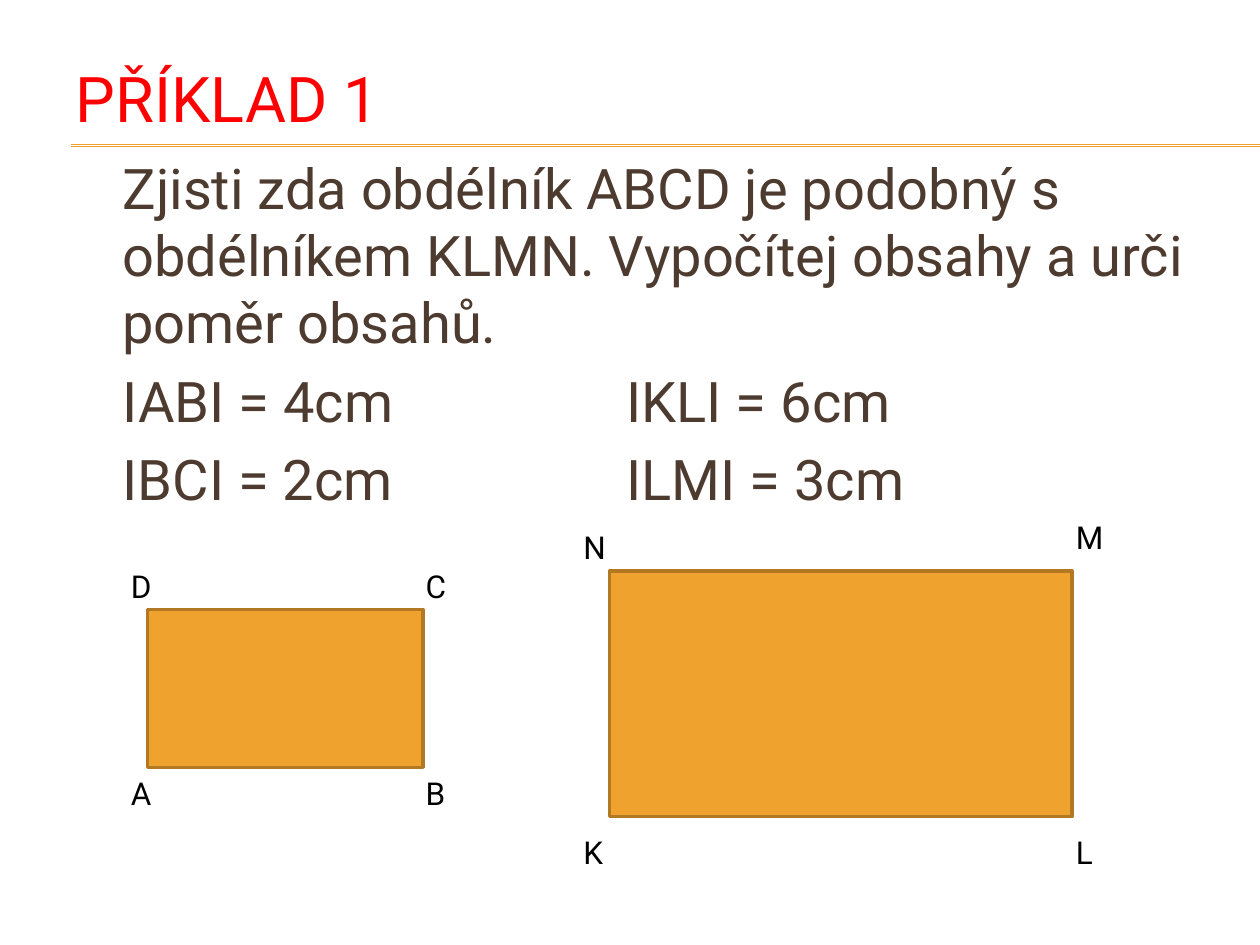
import pptx
import pptx.util
import pptx.dml.color
import pptx.enum.shapes
import pptx.enum.text
import pptx.oxml

Cm = pptx.util.Cm
Pt = pptx.util.Pt

FONT = "Roboto"
COLORS = {
    "title": "FF0000",
    "body": "4E3B30",
    "label": "000000",
    "fill": "F0A22E",
    "outline": "B27822",
}
TITLE = "PŘÍKLAD 1"
BODY = [
    "\tZjisti zda obdélník ABCD je podobný s obdélníkem KLMN. Vypočítej obsahy a urči poměr obsahů.",
    "\tIABI = 4cm\t\tIKLI = 6cm",
    "\tIBCI = 2cm\t\tILMI = 3cm",
]
RULE_HEIGHTS = [2.92, 2.95]
RECTANGLES = [
    {
        "box": (2.97, 12.29, 5.56, 3.18),
        "labels": {"A": (2.39, 15.47), "B": (8.33, 15.47), "C": (8.33, 11.3), "D": (2.39, 11.3)},
    },
    {
        "box": (12.29, 11.51, 9.32, 4.95),
        "labels": {"K": (11.51, 16.66), "L": (21.44, 16.66), "M": (21.44, 10.31), "N": (11.51, 10.52)},
    },
]
LABEL_SIZE = (0.99, 1.02)


def color(name):
    return pptx.dml.color.RGBColor.from_string(COLORS[name])


def place(shape, *box):
    shape.left, shape.top, shape.width, shape.height = [Cm(value) for value in box]


def format_runs(paragraph, size, color_name):
    for run in paragraph.runs:
        run.font.name = FONT
        run.font.size = Pt(size)
        run.font.color.rgb = color(color_name)


def add_text_box(slide, *box):
    text_box = slide.shapes.add_textbox(*[Cm(value) for value in box])
    text_box.text_frame.word_wrap = True
    return text_box


def add_rule(slide, height):
    rule = slide.shapes.add_connector(
        pptx.enum.shapes.MSO_CONNECTOR.STRAIGHT, Cm(1.43), Cm(height), Cm(25.4), Cm(height)
    )
    rule.line.color.rgb = color("fill")
    rule.line.width = Pt(0.75)
    rule._element.spPr.append(pptx.oxml.parse_xml(
        '<a:effectLst xmlns:a="http://schemas.openxmlformats.org/drawingml/2006/main"/>'
    ))


def add_title(slide):
    title = slide.shapes.title
    place(title, 1.27, 0.76, 22.86, 2.41)
    title.text_frame.text = TITLE
    title.text_frame.vertical_anchor = pptx.enum.text.MSO_ANCHOR.MIDDLE
    paragraph = title.text_frame.paragraphs[0]
    paragraph.alignment = pptx.enum.text.PP_ALIGN.LEFT
    format_runs(paragraph, 36, "title")


def add_body(slide):
    text_frame = add_text_box(slide, 1.27, 2.97, 22.86, 15.09).text_frame
    text_frame.text = "\n".join(BODY)
    for paragraph in text_frame.paragraphs:
        properties = paragraph._p.get_or_add_pPr()
        properties.set("marL", str(Cm(0.95)))
        properties.set("indent", str(Cm(-0.95)))
        properties.set("defTabSz", str(Cm(2.54)))
        paragraph.space_before = Pt(6.4)
        format_runs(paragraph, 32, "body")


def add_rectangle(slide, box, labels):
    rectangle = slide.shapes.add_shape(
        pptx.enum.shapes.MSO_SHAPE.RECTANGLE, *[Cm(value) for value in box]
    )
    rectangle.shadow.inherit = False
    rectangle.fill.solid()
    rectangle.fill.fore_color.rgb = color("fill")
    rectangle.line.color.rgb = color("outline")
    rectangle.line.width = Pt(2)
    for letter, position in labels.items():
        text_frame = add_text_box(slide, *position, *LABEL_SIZE).text_frame
        text_frame.text = letter
        text_frame.auto_size = pptx.enum.text.MSO_AUTO_SIZE.SHAPE_TO_FIT_TEXT
        format_runs(text_frame.paragraphs[0], 18, "label")


def main():
    presentation = pptx.Presentation()
    presentation.slide_width = Cm(25.4)
    presentation.slide_height = Cm(19.05)
    slide = presentation.slides.add_slide(presentation.slide_layouts[5])
    for height in RULE_HEIGHTS:
        add_rule(slide, height)
    add_title(slide)
    add_body(slide)
    for rectangle in RECTANGLES:
        add_rectangle(slide, **rectangle)
    presentation.save("out.pptx")


if __name__ == "__main__":
    main()
